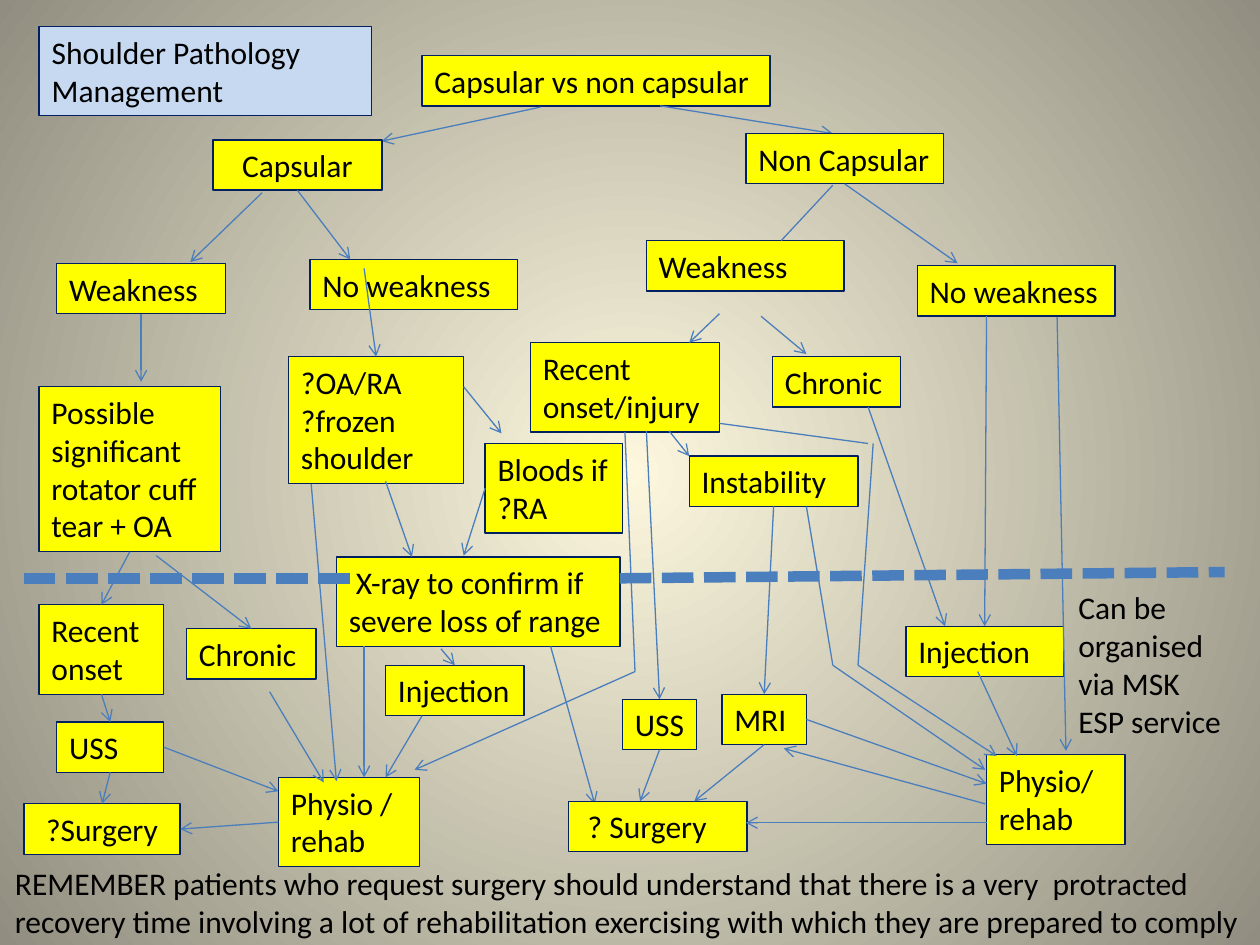
from lxml import etree
from pptx import Presentation
from pptx.dml.color import RGBColor
from pptx.enum.dml import MSO_LINE
from pptx.enum.shapes import MSO_CONNECTOR, MSO_SHAPE
from pptx.enum.text import MSO_ANCHOR, MSO_AUTO_SIZE, PP_ALIGN
from pptx.oxml.ns import qn
from pptx.util import Inches, Pt

TOP, LEFT, BOTTOM, RIGHT = range(4)
YELLOW, PALE_BLUE, NAVY, BLUE = "FFFF00", "C6D9F1", "002060", "4B7EBC"
ONE, TWO, THREE, FOUR = 0.4, 0.71, 1.01, 1.31  # box height by lines of text


def rgb(hex_color):
    return RGBColor.from_string(hex_color)


def place(sp, left, top, width, height):
    sp.left, sp.top = Inches(left), Inches(top)
    sp.width, sp.height = Inches(width), Inches(height)


def set_text(sp, text, align=PP_ALIGN.LEFT, auto_size=MSO_AUTO_SIZE.SHAPE_TO_FIT_TEXT):
    tf = sp.text_frame
    tf.text = text
    tf.word_wrap = True
    tf.auto_size = auto_size
    tf.vertical_anchor = MSO_ANCHOR.TOP
    for p in tf.paragraphs:
        p.alignment = align
        for r in p.runs:
            r.font.name = "Calibri"
            r.font.size = Pt(18)
            r.font.color.rgb = rgb("000000")


def set_box(sp, fill, line_width=0.75):
    sp.fill.solid()
    sp.fill.fore_color.rgb = rgb(fill)
    sp.line.color.rgb = rgb(NAVY)
    sp.line.width = Pt(line_width)


def add_box(slide, text, left, top, width, height,
            align=PP_ALIGN.LEFT, line_width=0.75):
    sp = slide.shapes.add_shape(
        MSO_SHAPE.RECTANGLE, Inches(left), Inches(top), Inches(width), Inches(height))
    sp.shadow.inherit = False
    set_box(sp, YELLOW, line_width)
    set_text(sp, text, align)
    return sp


def add_note(slide, text, left, top, width, height):
    sp = slide.shapes.add_textbox(
        Inches(left), Inches(top), Inches(width), Inches(height))
    set_text(sp, text)


def add_line(slide, start, end, width=0.75, arrow=True):
    s = slide.shapes.add_connector(
        MSO_CONNECTOR.STRAIGHT, *(Inches(v) for v in (*start, *end)))
    s.line.color.rgb = rgb(BLUE)
    s.line.width = Pt(width)
    if arrow:
        etree.SubElement(s.line._get_or_add_ln(), qn("a:tailEnd"), type="arrow")
    etree.SubElement(s._element.spPr, qn("a:effectLst"))
    return s


def add_branch(slide, left, top, boxes, arrows, lines=()):
    """Draw boxes and links; a link end is a point or a (box name, side) pair."""
    shapes = {}
    for name, (text, x, y, *rest) in boxes.items():
        shapes[name] = add_box(slide, text, left + x, top + y, *rest)

    def point(end):
        return (left, top) if end[0] in shapes else (left + end[0], top + end[1])

    for links, arrow in ((arrows, True), (lines, False)):
        for start, end in links:
            s = add_line(slide, point(start), point(end), arrow=arrow)
            if start[0] in shapes:
                s.begin_connect(shapes[start[0]], start[1])
            if end[0] in shapes:
                s.end_connect(shapes[end[0]], end[1])


def set_background(slide):
    fill = slide.background.fill
    fill.gradient()
    for stop, color in zip(fill.gradient_stops, ("FCF7DD", "918E81")):
        stop.color.rgb = rgb(color)
    fill.gradient_stops[0].position = 0
    fill.gradient_stops[1].position = 1
    grad = slide._element.find(".//" + qn("a:gradFill"))
    grad.remove(grad.find(qn("a:lin")))
    circle = etree.Element(qn("a:path"), path="circle")
    etree.SubElement(circle, qn("a:fillToRect"), l="50000", t="50000", r="50000", b="50000")
    grad.find(qn("a:gsLst")).addnext(circle)


def add_header(slide, left, top):
    title = slide.shapes.title
    place(title, left, top, 2.64, TWO)
    set_box(title, PALE_BLUE)
    set_text(title, "Shoulder Pathology Management", auto_size=MSO_AUTO_SIZE.NONE)
    add_box(slide, "Capsular vs non capsular", left + 3.04, top + 0.23, 2.76, ONE,
            PP_ALIGN.LEFT, 1)
    add_line(slide, (left + 3.98, top + 0.64), (left + 2.72, top + 0.91))
    add_line(slide, (left + 4.93, top + 0.63), (left + 6.3, top + 0.85))


def add_capsular(slide, left, top):
    boxes = {
        "capsular": ("Capsular", 1.69, 0.11, 1.34, ONE, PP_ALIGN.CENTER, 1),
        "weakness": ("Weakness", 0.45, 1.09, 1.34, ONE),
        "no weakness": ("No weakness", 2.46, 1.06, 1.65, ONE),
        "tear": ("Possible significant rotator cuff tear + OA", 0.31, 2.07, 1.44, FOUR),
        "recent": ("Recent onset", 0.31, 3.8, 0.99, TWO),
        "chronic": ("Chronic", 1.48, 3.99, 1.03, ONE),
        "uss": ("USS", 0.45, 4.73, 0.85, ONE),
        "surgery": ("?Surgery", 0.19, 5.38, 1.24, ONE, PP_ALIGN.CENTER),
        "arthritis": ("?OA/RA\n?frozen shoulder", 2.29, 1.83, 1.39, THREE),
        "bloods": ("Bloods if ?RA", 3.85, 2.52, 1.09, TWO),
        "x-ray": (" X-ray to confirm if severe loss of range", 2.67, 3.42, 2.25, TWO),
        "injection": ("Injection", 3.06, 4.28, 1.1, ONE),
        "physio": ("Physio / rehab", 2.21, 5.17, 1.12, TWO),
    }
    arrows = [
        ((2.08, 0.53), (1.51, 1.08)),
        (("capsular", BOTTOM), (2.78, 1.06)),
        (("weakness", BOTTOM), (1.12, 2.03)),
        (("tear", BOTTOM), ("recent", TOP)),
        ((1.24, 3.41), ("chronic", TOP)),
        (("recent", BOTTOM), ("uss", TOP)),
        (("uss", BOTTOM), ("surgery", TOP)),
        (("uss", RIGHT), (2.21, 5.28)),
        (("physio", LEFT), ("surgery", RIGHT)),
        ((2.14, 4.49), (2.57, 5.21)),
        ((2.89, 1.13), ("arthritis", TOP)),
        ((3.68, 2.07), (3.98, 2.44)),
        (("bloods", LEFT), (3.68, 3.41)),
        ((3.06, 2.82), (3.27, 3.42)),
        ((2.47, 2.84), (2.67, 5.2)),
        ((2.89, 4.13), (2.89, 5.17)),
        ((3.5, 4.15), ("injection", TOP)),
        ((3.35, 4.68), (3.06, 5.17)),
        ((4.37, 4.13), (4.72, 5.38)),
    ]
    add_branch(slide, left, top, boxes, arrows)


def add_non_capsular(slide, left, top):
    boxes = {
        "non capsular": ("Non Capsular", 1.92, 0.06, 1.57, ONE),
        "weakness": ("Weakness", 1.13, 0.91, 1.57, ONE),
        "no weakness": ("No weakness", 3.28, 1.11, 1.57, ONE),
        "recent": ("Recent onset/injury", 0.21, 1.72, 1.5, TWO),
        "chronic": ("Chronic", 2.13, 1.83, 1.02, ONE),
        "instability": ("Instability", 1.47, 2.62, 1.34, ONE),
        "uss": ("USS", 0.94, 4.55, 0.59, ONE),
        "mri": ("MRI", 1.73, 4.51, 0.67, ONE),
        "injection": ("Injection", 3.19, 3.97, 1.25, ONE),
        "surgery": (" ? Surgery", 0.51, 5.36, 1.42, ONE),
        "physio": ("Physio/\nrehab", 3.83, 4.99, 1.1, TWO),
    }
    arrows = [
        (("non capsular", BOTTOM), (3.6, 1.09)),
        ((1.71, 1.49), (1.47, 1.72)),
        ((2.04, 1.51), (2.4, 1.81)),
        ((1.31, 2.42), (1.47, 2.62)),
        ((1.13, 2.42), ("uss", TOP)),
        ((1.04, 4.33), (-0.71, 5.11)),
        (("instability", BOTTOM), ("mri", TOP)),
        ((2.89, 2.23), (3.5, 3.97)),
        ((3.83, 1.51), ("injection", TOP)),
        ((4.39, 1.52), (4.46, 4.96)),
        ((3.76, 4.33), (4.07, 5)),
        (("uss", BOTTOM), (1.08, 5.36)),
        (("mri", BOTTOM), (1.51, 5.36)),
        (("mri", RIGHT), (3.83, 5.22)),
        ((2.61, 4.28), (3.82, 5.11)),
        ((2.81, 4.28), (3.91, 5)),
        ((3.82, 5.38), (2.22, 4.94)),
        ((3.83, 5.53), (1.92, 5.53)),
    ]
    # Plain link to weakness, then the first legs of the bent arrows
    lines = [
        ((2.61, 0.47), (2.2, 0.91)),
        (("recent", BOTTOM), (1.04, 4.33)),
        ((2.4, 3.02), (2.61, 4.28)),
        ((1.71, 2.36), (2.89, 2.52)),
        ((2.93, 2.52), (2.81, 4.28)),
    ]
    add_branch(slide, left, top, boxes, arrows, lines)


def add_service_level(slide, left, top):
    for start, end in (((0, 0.05), (2.59, 0.05)), ((4.73, 0.05), (9.53, 0))):
        s = add_line(slide, (left + start[0], top + start[1]),
                     (left + end[0], top + end[1]), width=6, arrow=False)
        s.line.dash_style = MSO_LINE.SQUARE_DOT
    add_note(slide, "Can be organised via MSK ESP service",
             left + 8.27, top + 0.08, 1.42, FOUR)


def main():
    prs = Presentation()
    prs.slide_width, prs.slide_height = Inches(10), Inches(7.5)
    slide = prs.slides.add_slide(prs.slide_layouts[5])
    set_background(slide)
    add_header(slide, 0.31, 0.21)
    add_capsular(slide, 0, 1)
    add_non_capsular(slide, 4, 1)
    add_service_level(slide, 0.19, 4.54)
    # Closing reminder
    add_note(slide, "REMEMBER patients who request surgery should understand that there "
             "is a very  protracted recovery time involving a lot of rehabilitation "
             "exercising with which they are prepared to comply", 0.02, 6.81, 9.98, TWO)
    prs.save("out.pptx")


if __name__ == "__main__":
    main()
